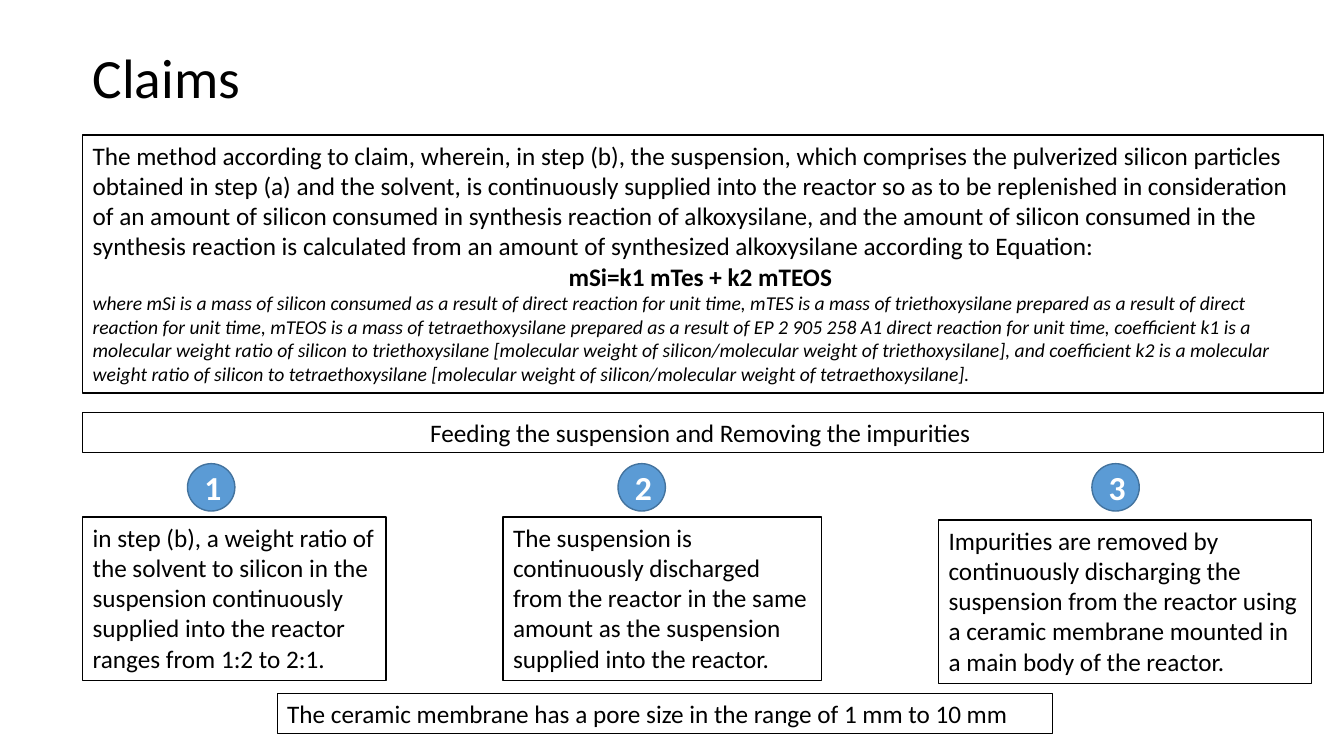
import pptx
import pptx.util
from pptx.dml.color import RGBColor
from pptx.enum.shapes import MSO_SHAPE
from pptx.enum.text import MSO_ANCHOR, PP_ALIGN
from pptx.util import Inches

BLACK = RGBColor(0x00, 0x00, 0x00)
WHITE = RGBColor(0xFF, 0xFF, 0xFF)
BLUE = RGBColor(0x5B, 0x9B, 0xD5)
NAVY = RGBColor(0x43, 0x73, 0x9E)

BODY = dict(name="Calibri", size=18, bold=False, italic=False, color=BLACK)
HEAD = BODY | dict(size=39.6)
BOLD = BODY | dict(bold=True)
NOTE = BODY | dict(size=14, italic=True)
BADGE = BODY | dict(size=24, bold=True, color=WHITE)

LEFT, MID = PP_ALIGN.LEFT, PP_ALIGN.CENTER

TITLE = "Claims"
METHOD = [
    ("The method according to claim, wherein, in step (b), the suspension, "
     "which comprises the pulverized silicon particles obtained in step (a) "
     "and the solvent, is continuously supplied into the reactor so as to be "
     "replenished in consideration of an amount of silicon consumed in "
     "synthesis reaction of alkoxysilane, and the amount of silicon consumed "
     "in the synthesis reaction is calculated from an amount of synthesized "
     "alkoxysilane according to Equation:", BODY, LEFT),
    ("mSi=k1 mTes + k2 mTEOS ", BOLD, MID),
    ("where mSi is a mass of silicon consumed as a result of direct reaction "
     "for unit time, mTES is a mass of triethoxysilane prepared as a result "
     "of direct reaction for unit time, mTEOS is a mass of tetraethoxysilane "
     "prepared as a result of EP 2 905 258 A1 direct reaction for unit time, "
     "coefficient k1 is a molecular weight ratio of silicon to "
     "triethoxysilane [molecular weight of silicon/molecular weight of "
     "triethoxysilane], and coefficient k2 is a molecular weight ratio of "
     "silicon to tetraethoxysilane [molecular weight of silicon/molecular "
     "weight of tetraethoxysilane].", NOTE, LEFT),
]
FEED = "Feeding the suspension and Removing the impurities "
PORE = "The ceramic membrane has a pore size in the range of 1 mm to 10 mm"

# badge left, box left, box top, box width, text
STEPS = [
    (1.86, 0.82, 5.13, 3.01,
     "in step (b), a weight ratio of the solvent to silicon in the suspension "
     "continuously supplied into the reactor ranges from 1:2 to 2:1."),
    (6.13, 4.99, 5.13, 3.16,
     "The suspension is continuously discharged from the reactor in the same "
     "amount as the suspension supplied into the reactor."),
    (10.83, 9.31, 5.16, 3.7,
     "Impurities are removed by continuously discharging the suspension from "
     "the reactor using a ceramic membrane mounted in a main body of the "
     "reactor."),
]
EDGE, WIDE = 0.82, 12.31
BADGE_TOP, BADGE_SIZE = 4.6, 0.47
STEP_HIGH, BAR_HIGH = 1.62, 0.4


def write(shape, paras, anchor):
    frame = shape.text_frame
    frame.word_wrap = True
    frame.vertical_anchor = anchor
    for i, (text, style, align) in enumerate(paras):
        para = frame.add_paragraph() if i else frame.paragraphs[0]
        para.alignment = align
        run = para.add_run()
        run.text = text
        for key, value in style.items():
            if key == "color":
                run.font.color.rgb = value
            else:
                setattr(run.font, key,
                        pptx.util.Pt(value) if key == "size" else value)


def panel(slide, at, paras, kind=MSO_SHAPE.RECTANGLE, fill=WHITE, line=BLACK,
          anchor=MSO_ANCHOR.TOP):
    shape = slide.shapes.add_shape(kind, *map(Inches, at))
    shape.shadow.inherit = False
    shape.fill.solid()
    shape.fill.fore_color.rgb = fill
    shape.line.color.rgb = line
    shape.line.width = pptx.util.Pt(1)
    write(shape, paras, anchor)


def main():
    deck = pptx.Presentation()
    deck.slide_width, deck.slide_height = Inches(13.33), Inches(7.5)
    slide = deck.slides.add_slide(deck.slide_layouts[6])

    title = slide.shapes.add_textbox(*map(Inches, (EDGE, 0.42, 11.5, 0.75)))
    write(title, [(TITLE, HEAD, LEFT)], MSO_ANCHOR.MIDDLE)
    title.text_frame.paragraphs[0].line_spacing = 0.9

    panel(slide, (EDGE, 1.34, WIDE, 2.56), METHOD)
    panel(slide, (EDGE, 4.09, WIDE, BAR_HIGH), [(FEED, BODY, MID)])
    for num, (spot, left, top, width, text) in enumerate(STEPS, 1):
        panel(slide, (left, top, width, STEP_HIGH), [(text, BODY, LEFT)])
        panel(slide, (spot, BADGE_TOP, BADGE_SIZE, BADGE_SIZE),
              [(str(num), BADGE, MID)], MSO_SHAPE.OVAL, BLUE, NAVY,
              MSO_ANCHOR.MIDDLE)
    panel(slide, (2.75, 6.88, 7.69, BAR_HIGH), [(PORE, BODY, LEFT)])

    deck.save("out.pptx")


if __name__ == "__main__":
    main()
